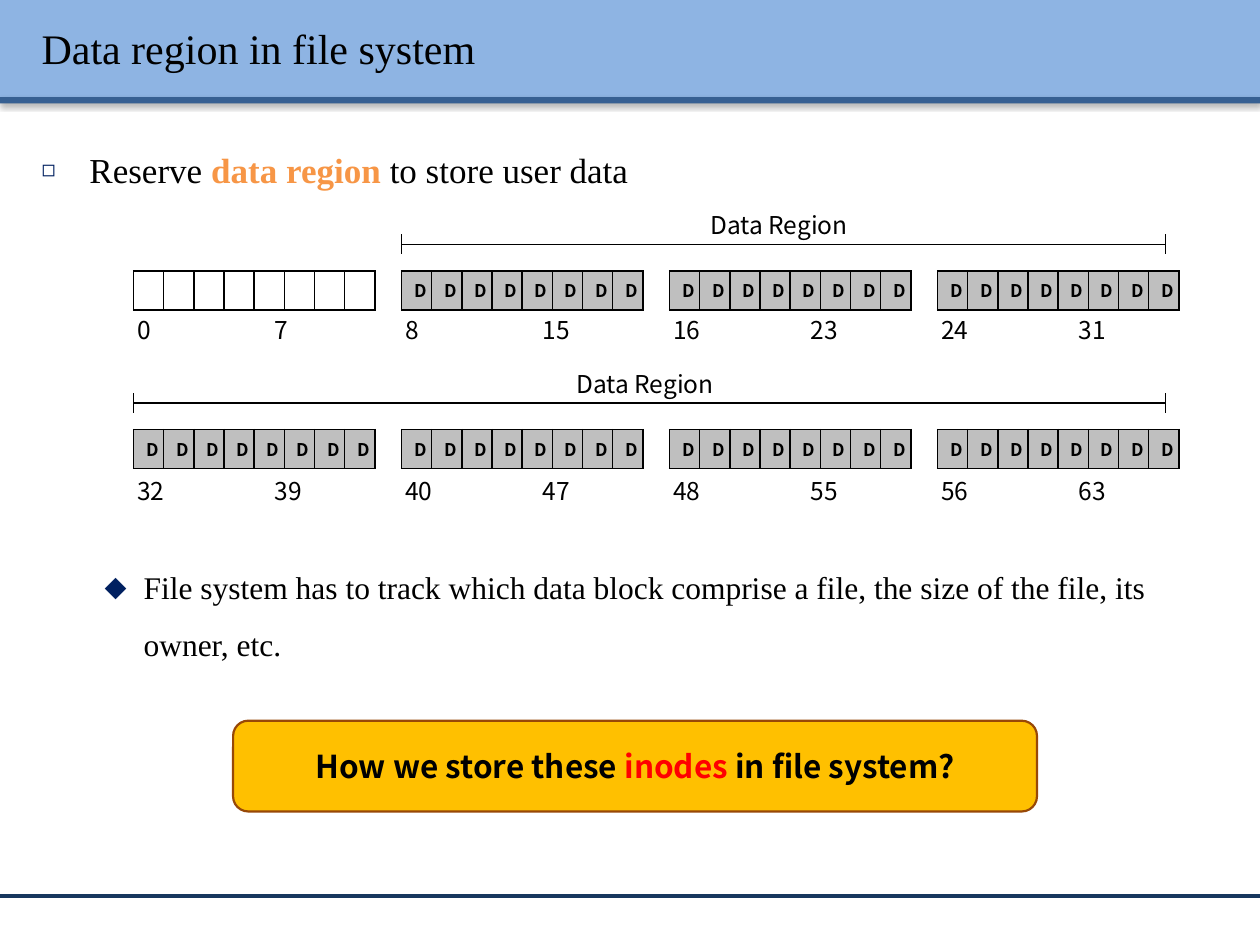
from lxml.etree import SubElement
from pptx import Presentation
from pptx.dml.color import RGBColor
from pptx.enum.shapes import MSO_CONNECTOR, MSO_SHAPE
from pptx.enum.text import MSO_ANCHOR, MSO_AUTO_SIZE, PP_ALIGN
from pptx.oxml.ns import qn
from pptx.util import Inches, Pt

SERIF, SANS = "Times New Roman", "Noto Sans CJK KR"
BLACK, NAVY, GRAY = "000000", "002060", "BFBFBF"


def color(code):
    return RGBColor.from_string(code)


def unit(*nums):
    """Turn grid steps (100 columns by 75 rows) into lengths."""
    return [Inches(num / 10) for num in nums]


def node(parent, tag, **attrs):
    return SubElement(parent, qn(tag), {key: str(val) for key, val in attrs.items()})


def shade(parent):
    """Give a soft shadow that falls straight down."""
    drop = node(node(parent, "a:effectLst"), "a:outerShdw", blurRad=Pt(3.1),
                dist=Pt(1.6), dir=5400000, rotWithShape=0)
    node(node(drop, "a:srgbClr", val=BLACK), "a:alpha", val=38000)


class Deck:
    def __init__(self):
        self.show = Presentation()
        self.show.slide_width, self.show.slide_height = unit(100, 75)
        self.slide = self.show.slides.add_slide(self.show.slide_layouts[1])
        self.shapes = self.slide.shapes

    def style(self, para, size, face=SANS, bold=False):
        font = para.font
        font.name, font.size, font.bold = face, Pt(size), bold
        font.color.rgb = color(BLACK)

    def put(self, para, parts):
        """Add runs; a part is a text with the run's own colour or None."""
        for text, tint in parts:
            run = para.add_run()
            run.text = text
            if tint:
                run.font.color.rgb = color(tint)

    def band(self, top, high, fill):
        bar = self.shapes.add_shape(MSO_SHAPE.RECTANGLE, *unit(0, top, 100, high))
        bar.fill.solid()
        bar.fill.fore_color.rgb = color(fill)
        bar.line.fill.background()
        shade(bar.element.spPr)

    def line(self, x1, y1, x2, y2, tint=BLACK, width=1):
        rule = self.shapes.add_connector(MSO_CONNECTOR.STRAIGHT, *unit(x1, y1, x2, y2))
        rule.line.color.rgb = color(tint)
        rule.line.width = Pt(width)
        node(rule.element.spPr, "a:effectLst")

    def place(self, holder, *box):
        """Move a placeholder in front of all that is drawn so far."""
        holder.left, holder.top, holder.width, holder.height = unit(*box)
        self.shapes.element.append(holder.element)
        frame = holder.text_frame
        frame.auto_size = MSO_AUTO_SIZE.NONE
        return frame

    def title(self, text):
        frame = self.place(self.shapes.title, 2.3, 0.6, 96.1, 6.4)
        frame.vertical_anchor = MSO_ANCHOR.MIDDLE
        para = frame.paragraphs[0]
        para.alignment = PP_ALIGN.LEFT
        self.style(para, 24, SERIF)
        self.put(para, [(text, None)])
        shade(para.runs[0]._r.get_or_add_rPr())

    def bullet(self, para, mark, left, hang, size, before, scale=100):
        para.line_spacing = 1.5
        para.space_before = Pt(before)
        props = para._p.get_or_add_pPr()
        props.set("marL", str(Inches(left)))
        props.set("indent", str(-Inches(hang)))
        node(node(props, "a:buClr"), "a:srgbClr", val=NAVY)
        node(props, "a:buSzPct", val=scale * 1000)
        node(props, "a:buChar", char=mark)
        self.style(para, size, SERIF)

    def body(self, head, note):
        frame = self.place(self.slide.placeholders[1], 2.3, 9.6, 96.1, 60.2)
        first = frame.paragraphs[0]
        self.bullet(first, "◻", 0.38, 0.38, 20, 4, 65)
        self.put(first, head)
        first.runs[1].font.bold = True
        second = frame.add_paragraph()
        second.level = 1
        self.bullet(second, "⬥", 0.81, 0.31, 18, 205)
        self.put(second, [(note, None)])

    def blocks(self, x, y, text, fill, count=8):
        table = self.shapes.add_table(1, count, *unit(x, y, 18.2, 3.1)).table
        table.first_row = table.horz_banding = False
        for cell in table.iter_cells():
            cell.margin_top = cell.margin_bottom = 0
            cell.vertical_anchor = MSO_ANCHOR.MIDDLE
            props = cell._tc.get_or_add_tcPr()
            for side in "LRTB":
                edge = node(props, f"a:ln{side}", w=Pt(1))
                node(node(edge, "a:solidFill"), "a:srgbClr", val=BLACK)
            cell.fill.solid()
            cell.fill.fore_color.rgb = color(fill)
            para = cell.text_frame.paragraphs[0]
            para.alignment = PP_ALIGN.CENTER
            self.style(para, 10, bold=True)
            if text:
                self.put(para, [(text, None)])

    def label(self, x, y, wide, text, tab=None):
        box = self.shapes.add_textbox(*unit(x, y, wide, 3.4))
        box.text_frame.word_wrap = True
        para = box.text_frame.paragraphs[0]
        if tab:
            stops = node(para._p.get_or_add_pPr(), "a:tabLst")
            node(stops, "a:tab", pos=Inches(tab), algn="l")
        self.style(para, 14)
        self.put(para, [(text, None)])

    def span(self, left, right, y, text):
        """Draw a measure line with end ticks and a text above it."""
        self.line(left, y, right, y)
        for x in (left, right):
            self.line(x, y - 0.8, x, y + 0.8)
        self.label((left + right) / 2 - 6.8, y - 3.2, 13.6, text)

    def callout(self, parts):
        box = self.shapes.add_shape(MSO_SHAPE.ROUNDED_RECTANGLE, *unit(18.5, 57.2, 63.8, 7.2))
        box.shadow.inherit = False
        box.fill.solid()
        box.fill.fore_color.rgb = color("FFC000")
        box.line.color.rgb = color("984807")
        box.line.width = Pt(1.25)
        frame = box.text_frame
        frame.vertical_anchor = MSO_ANCHOR.MIDDLE
        para = frame.paragraphs[0]
        para.alignment = PP_ALIGN.CENTER
        self.style(para, 18, bold=True)
        self.put(para, parts)


def main():
    deck = Deck()
    deck.band(0, 7.7, "8EB4E3")
    deck.band(7.7, 0.5, "376092")
    deck.line(0, 71.1, 100, 71.1, "17375E", 2)
    deck.title("Data region in file system")
    deck.body([("Reserve ", None), ("data region ", "F79646"), ("to store user data", None)],
              "File system has to track which data block comprise a file, "
              "the size of the file, its owner, etc.")

    left, step, right = 10.6, 21.27, 92.5
    # top of the blocks, top of their numbers, first group of the data region
    for row, (top, below, start) in enumerate([(21.5, 24.5, 1), (34.1, 37.3, 0)]):
        for col in range(4):
            x, first = left + col * step, 8 * (4 * row + col)
            used = col >= start
            deck.blocks(x, top, "D" if used else "", GRAY if used else "FFFFFF")
            deck.label(x - 0.7, below, 20.3, f"{first}\t{first + 7}", 1.09)
        deck.span(left + start * step, right, top - 2.1, "Data Region")

    deck.callout([("How we store these ", BLACK), ("inodes", "FF0000"),
                  (" in file system?", BLACK)])
    deck.show.save("out.pptx")


if __name__ == "__main__":
    main()
